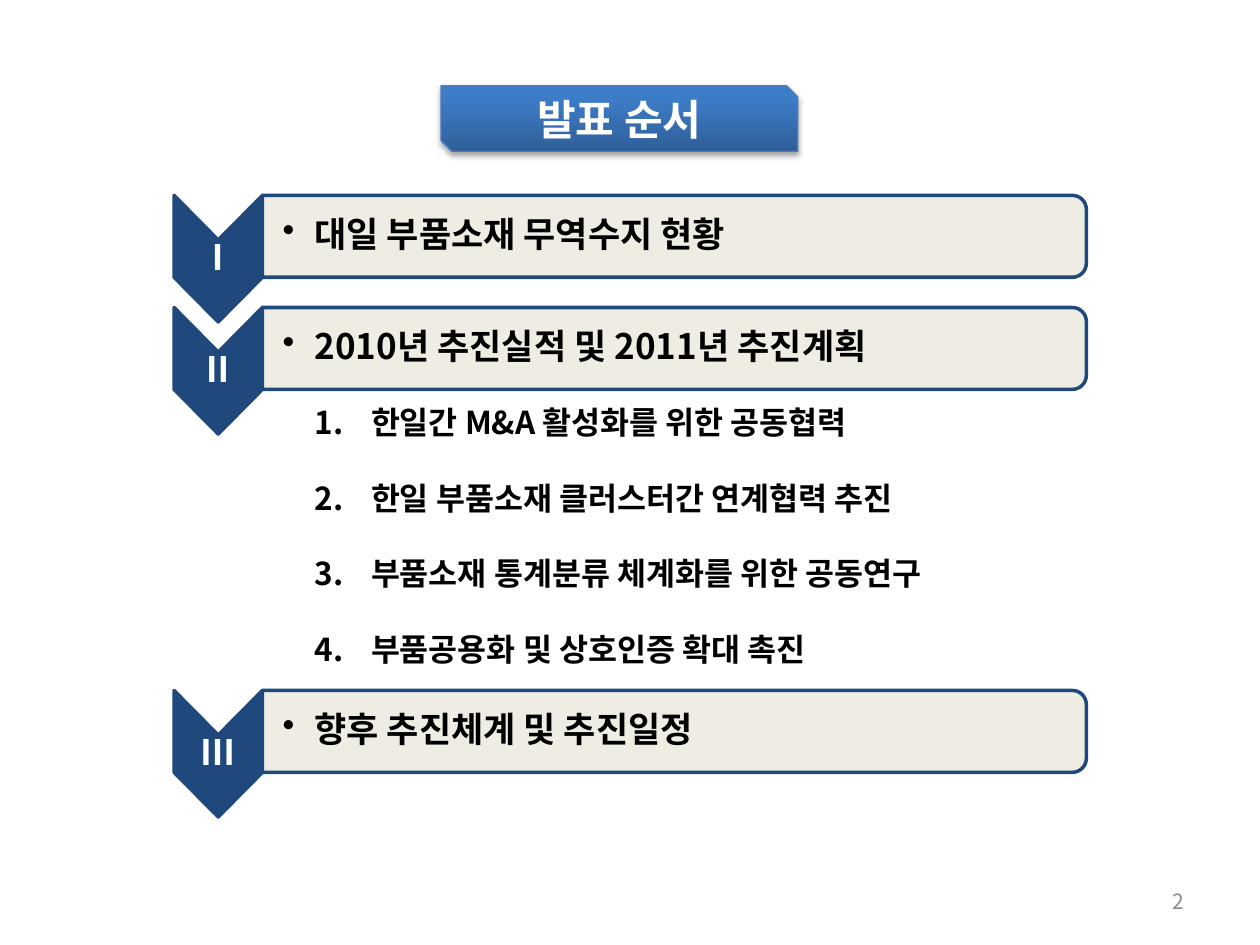
from math import cos, pi, sin

from lxml import etree
from pptx import Presentation
from pptx.dml.color import RGBColor
from pptx.enum.shapes import MSO_SHAPE
from pptx.enum.text import MSO_ANCHOR, PP_ALIGN
from pptx.oxml.ns import qn
from pptx.util import Cm, Pt

SNIPPED = MSO_SHAPE.SNIP_2_DIAG_RECTANGLE
MIDDLE, TOP = MSO_ANCHOR.MIDDLE, MSO_ANCHOR.TOP
LEFT, CENTER, RIGHT = PP_ALIGN.LEFT, PP_ALIGN.CENTER, PP_ALIGN.RIGHT

TITLE = "발표 순서"
PAGE_NUMBER = "2"
SECTIONS = [
    ("Ⅰ", "대일 부품소재 무역수지 현황", 3.94),
    ("Ⅱ", "2010년 추진실적 및 2011년 추진계획", 6.2),
    ("Ⅲ", "향후 추진체계 및 추진일정", 13.92),
]
TOPICS = [
    "한일간 M&A 활성화를 위한 공동협력",
    "한일 부품소재 클러스터간 연계협력 추진",
    "부품소재 통계분류 체계화를 위한 공동연구",
    "부품공용화 및 상호인증 확대 촉진",
]

THEME = {
    "font": "Noto Sans CJK KR",
    "navy": "1F497D", "cream": "EEECE1", "white": "FFFFFF", "black": "000000",
    "gray": "8C8C8C", "title_line": "4B7EBC",
    "title_stops": [(0, "2F5F99"), (0.8, "3D7CC7")],
    "title_size": 24, "section_size": 20, "topic_size": 18, "page_size": 12,
}
TITLE_BOX = (8.89, 1.73, 7.19, 1.32)
TOPIC_BOX = (8.0 - 1.9, 8.0, 14.81, 5.64)
PAGE_BOX = (18.21, 17.65, 5.92, 1.02)
CHEVRON_LEFT, CHEVRON_WIDTH, CHEVRON_DEPTH = 3.51, 1.78, 0.9
PANEL_WIDTH, PANEL_HEIGHT, CORNER = 16.61, 1.65, 0.28
TOPIC_LEADING = 21.6


def color(name):
    return RGBColor.from_string(THEME.get(name, name))


def add_node(parent, tag, **attributes):
    values = {key: str(value) for key, value in attributes.items()}
    return etree.SubElement(parent, qn(tag), values)


def write(box, texts, size, ink, align=LEFT, anchor=MIDDLE, bold=True, margins=None):
    frame = box.text_frame
    frame.word_wrap = True
    frame.vertical_anchor = anchor
    if margins:
        (frame.margin_left, frame.margin_top,
         frame.margin_right, frame.margin_bottom) = map(Cm, margins)
    for index, text in enumerate(texts):
        para = frame.add_paragraph() if index else frame.paragraphs[0]
        para.text = text
        para.alignment = align
        font = para.font
        font.size, font.bold, font.name = Pt(THEME[size]), bold, THEME["font"]
        font.color.rgb = color(ink)
        add_node(para._p.pPr.find(qn("a:defRPr")), "a:ea", typeface=THEME["font"])
    return frame.paragraphs


def add_bullet(para, indent, tag, **attributes):
    properties = para._p.pPr
    properties.set("marL", str(Cm(indent)))
    properties.set("indent", str(-Cm(indent)))
    bullet = add_node(properties, tag, **attributes)
    properties.find(qn("a:defRPr")).addprevious(bullet)


def add_outline(page, points, fill):
    corners = [(Cm(x), Cm(y)) for x, y in points]
    builder = page.shapes.build_freeform(*corners[0])
    builder.add_line_segments(corners[1:], close=True)
    shape = builder.convert_to_shape()
    shape.shadow.inherit = False
    shape.fill.solid()
    shape.fill.fore_color.rgb = color(fill)
    shape.line.color.rgb = color("navy")
    shape.line.width = Pt(2)
    return shape


def add_section(page, numeral, heading, top):
    left, right = CHEVRON_LEFT, CHEVRON_LEFT + CHEVRON_WIDTH
    middle, bottom = (left + right) / 2, top + PANEL_HEIGHT
    chevron = add_outline(page, [
        (right, top), (right, bottom), (middle, bottom + CHEVRON_DEPTH),
        (left, bottom), (left, top), (middle, top + CHEVRON_DEPTH)], "navy")
    para = write(chevron, [numeral], "section_size", "white", CENTER,
                 margins=(0.03, 0.94, 0.03, 0.94))[0]
    para.line_spacing = 0.9

    arc_x = right + PANEL_WIDTH - CORNER
    angles = [step * pi / 16 for step in range(9)]
    upper = [(arc_x + CORNER * sin(a), top + CORNER * (1 - cos(a))) for a in angles]
    lower = [(x, top + bottom - y) for x, y in reversed(upper)]
    panel = add_outline(page, [(right, top), *upper, *lower, (right, bottom)], "cream")
    shade = panel.fill._xPr.find(qn("a:solidFill"))[0]
    add_node(shade, "a:alpha", val=90000)
    para = write(panel, [heading], "section_size", "black",
                 margins=(0.41, 0.13, 0.13, 0.13))[0]
    para.line_spacing = 0.9
    add_bullet(para, 0.64, "a:buChar", char="•")


def add_title(page):
    banner = page.shapes.add_shape(SNIPPED, *map(Cm, TITLE_BOX))
    banner.fill.gradient()
    banner.fill.gradient_angle = 90
    for stop, (position, shade) in zip(banner.fill.gradient_stops, THEME["title_stops"]):
        stop.position, stop.color.rgb = position, color(shade)
    banner.line.color.rgb = color("title_line")
    banner.line.width = Pt(0.75)
    banner.shadow.inherit = False
    effects = banner._element.spPr.find(qn("a:effectLst"))
    shadow = add_node(effects, "a:outerShdw", blurRad=Pt(3.1), dist=Pt(1.8),
                      dir=5400000, rotWithShape=0)
    add_node(add_node(shadow, "a:srgbClr", val=THEME["black"]), "a:alpha", val=35000)
    write(banner, [TITLE], "title_size", "white", CENTER)


def add_topics(page):
    box = page.shapes.add_textbox(*map(Cm, TOPIC_BOX))
    for para in write(box, TOPICS, "topic_size", "black", anchor=TOP):
        para.line_spacing = para.space_after = Pt(TOPIC_LEADING)
        add_bullet(para, 1.13, "a:buAutoNum", type="arabicPeriod")


def main():
    """Build the agenda slide."""
    deck = Presentation()
    deck.slide_width, deck.slide_height = Cm(25.4), Cm(19.05)
    page = deck.slides.add_slide(deck.slide_layouts[6])
    for section in SECTIONS:
        add_section(page, *section)
    add_title(page)
    number = page.shapes.add_textbox(*map(Cm, PAGE_BOX))
    write(number, [PAGE_NUMBER], "page_size", "gray", RIGHT, bold=False)
    add_topics(page)
    deck.save("out.pptx")


if __name__ == "__main__":
    main()
